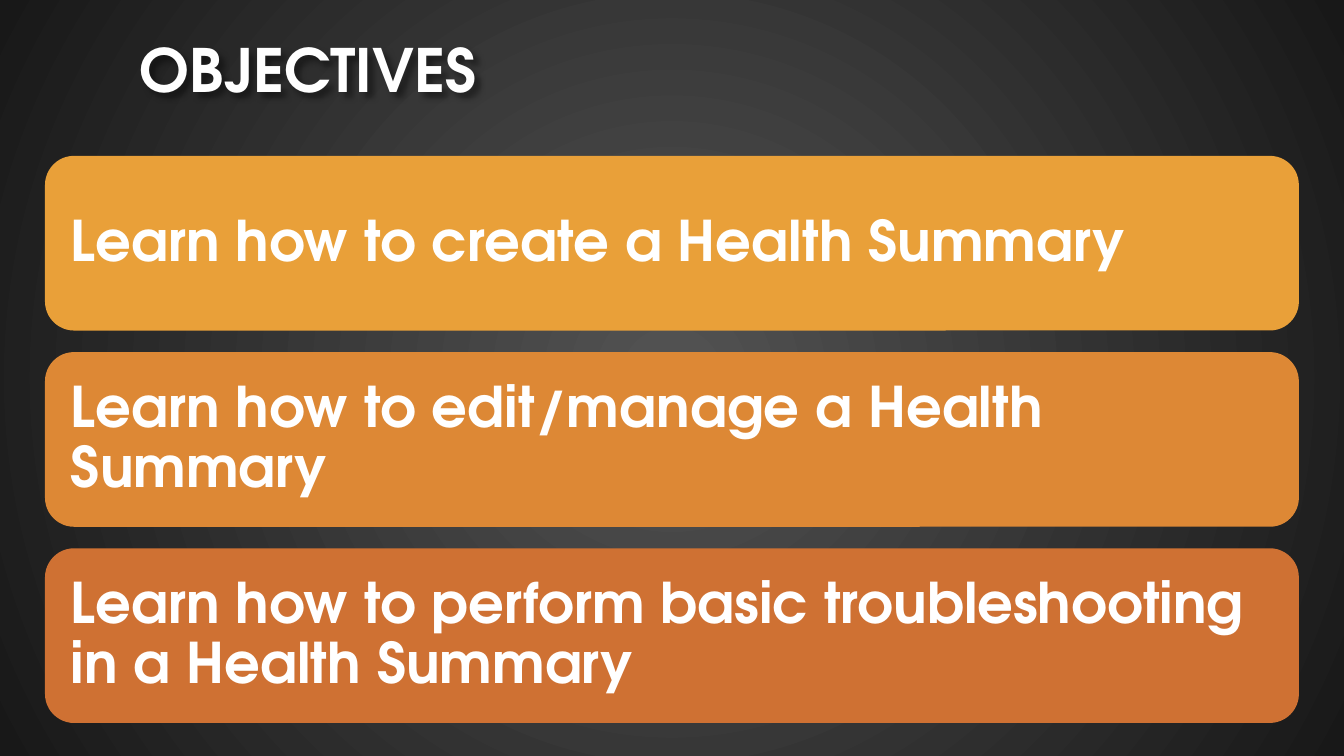
import pptx
import pptx.dml.color
import pptx.enum.shapes
import pptx.enum.text
import pptx.oxml
import pptx.oxml.ns
import pptx.util

Inches = pptx.util.Inches
FONT = "TeX Gyre Adventor"
WHITE = "FFFFFF"
DRAWING_NS = pptx.oxml.ns.nsdecls("a")

OBJECTIVES = [
    ("Learn how to create a Health Summary", "E9A039"),
    ("Learn how to edit/manage a Health Summary", "DD8835"),
    ("Learn how to perform basic troubleshooting in a Health Summary", "CF7133"),
]
SLIDE_WIDTH = 10
SLIDE_HEIGHT = SLIDE_WIDTH * 9 / 16
CARD_WIDTH, CARD_HEIGHT = 9.33, 1.3
CARD_LEFT = (SLIDE_WIDTH - CARD_WIDTH) / 2
CARD_TOP = 1.16
CARD_PITCH = 1.46


def rgb(hex_color):
    return pptx.dml.color.RGBColor.from_string(hex_color)


def apply_format(target, values):
    for name, value in values.items():
        setattr(target, name, value)


def set_radial_background(slide, center, edge):
    fill = slide.background.fill
    fill.gradient()
    for stop, color in zip(fill.gradient_stops, (center, edge)):
        stop.color.rgb = rgb(color)
    linear = slide.element.xpath(".//p:bg//a:lin")[0]
    radial = pptx.oxml.parse_xml(
        f'<a:path {DRAWING_NS} path="circle">'
        '<a:fillToRect l="50000" t="50000" r="50000" b="50000"/></a:path>'
    )
    linear.getparent().replace(linear, radial)


def write_text(shape, text, size, inset):
    """Fill the shape with one bold, white, left-aligned paragraph."""
    frame = shape.text_frame
    apply_format(frame, {
        "word_wrap": True,
        "vertical_anchor": pptx.enum.text.MSO_ANCHOR.MIDDLE,
        "margin_left": Inches(inset),
        "margin_right": Inches(inset),
        "margin_top": Inches(inset),
        "margin_bottom": Inches(inset),
    })
    paragraph = frame.paragraphs[0]
    paragraph.alignment = pptx.enum.text.PP_ALIGN.LEFT
    run = paragraph.add_run()
    run.text = text
    apply_format(run.font, {"name": FONT, "size": pptx.util.Pt(size), "bold": True})
    run.font.color.rgb = rgb(WHITE)
    return paragraph


def add_soft_shadow(shape):
    """Without a fill on the shape, the shadow falls from its text."""
    shadow = pptx.oxml.parse_xml(
        f'<a:effectLst {DRAWING_NS}>'
        '<a:outerShdw blurRad="38100" dist="38100" dir="2700000" algn="tl">'
        '<a:srgbClr val="000000"><a:alpha val="43000"/></a:srgbClr>'
        '</a:outerShdw></a:effectLst>'
    )
    shape.element.spPr.append(shadow)


def add_title(slide, text):
    title = slide.shapes.add_textbox(
        Inches(0.94), Inches(-0.27), Inches(8.12), Inches(1.56))
    write_text(title, text, 32, 0.1)
    add_soft_shadow(title)


def add_objective_card(slide, top, text, color):
    card = slide.shapes.add_shape(
        pptx.enum.shapes.MSO_SHAPE.ROUNDED_RECTANGLE,
        Inches(CARD_LEFT), Inches(top), Inches(CARD_WIDTH), Inches(CARD_HEIGHT))
    card.shadow.inherit = False
    card.fill.solid()
    card.fill.fore_color.rgb = rgb(color)
    card.line.fill.background()
    paragraph = write_text(card, text, 30, 0.13)
    paragraph.line_spacing = 0.9


def main():
    presentation = pptx.Presentation()
    apply_format(presentation, {
        "slide_width": Inches(SLIDE_WIDTH), "slide_height": Inches(SLIDE_HEIGHT)})
    slide = presentation.slides.add_slide(presentation.slide_layouts[6])
    set_radial_background(slide, "535353", "181818")
    add_title(slide, "OBJECTIVES")
    for index, (text, color) in enumerate(OBJECTIVES):
        add_objective_card(slide, CARD_TOP + index * CARD_PITCH, text, color)
    presentation.save("out.pptx")


if __name__ == "__main__":
    main()
